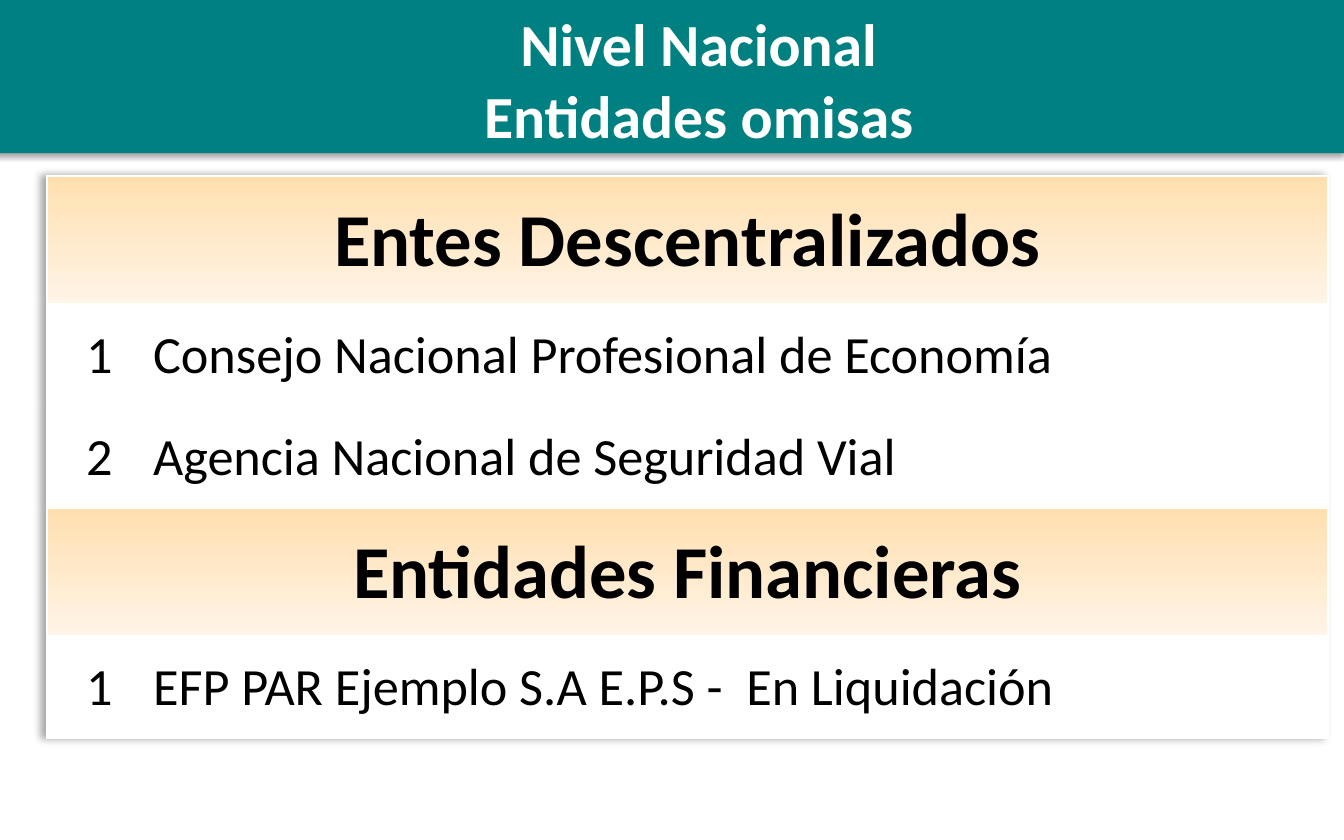
from lxml import etree
from pptx import Presentation, util as u
from pptx.dml.color import RGBColor
from pptx.enum import shapes, text
from pptx.oxml import ns

PX = u.Inches(1) // 100
FONT = "Calibri"
SECTIONS = [
    ("Entes Descentralizados", ["Consejo Nacional Profesional de Economía",
                                "Agencia Nacional de Seguridad Vial"]),
    ("Entidades Financieras", ["EFP PAR Ejemplo S.A E.P.S -  En Liquidación"]),
]


def px(*values):
    """Turn px lengths into EMU."""
    return [v * PX for v in values]


def rgb(value):
    """Turn a hex string into a colour."""
    return RGBColor.from_string(value)


def shadow(blur, dist, angle, alpha):
    """Return an effect list holding one black outer shadow."""
    effects = etree.Element(ns.qn("a:effectLst"))
    outer = etree.SubElement(effects, ns.qn("a:outerShdw"), blurRad=str(u.Pt(blur)),
                             dist=str(u.Pt(dist)), dir=str(angle * 60000),
                             algn="tl", rotWithShape="0")
    color = etree.SubElement(outer, ns.qn("a:srgbClr"), val="000000")
    etree.SubElement(color, ns.qn("a:alpha"), val=str(alpha * 1000))
    return effects


def style(p, size, color, bold, align):
    """Set the font and alignment of a paragraph."""
    p.alignment = align
    p.font.name, p.font.size, p.font.bold = FONT, u.Pt(size), bold
    p.font.color.rgb = rgb(color)


def add_header(s, x, y, w, h):
    """Draw the title band and its two-line title."""
    sp = s.shapes.add_shape(shapes.MSO_SHAPE.RECTANGLE, *px(x, y, w, h))
    sp.fill.solid()
    sp.fill.fore_color.rgb = rgb("008080")
    sp.line.fill.background()
    sp._element.spPr.append(shadow(3.1, 1.6, 90, 38))
    tf = s.shapes.add_textbox(*px(x + 268, y, 512, h - 6)).text_frame
    tf.word_wrap = True
    tf.margin_top, tf.margin_bottom = px(7, 0)
    p = tf.paragraphs[0]
    p.text = "Nivel Nacional\vEntidades omisas"
    style(p, 32, "FFFFFF", True, text.PP_ALIGN.CENTER)


def fill_cell(cell, value, size, bold, align):
    """Write a table cell on a white ground."""
    cell.margin_left, cell.margin_top, cell.margin_right, cell.margin_bottom = px(1, 1, 1, 0)
    cell.vertical_anchor = text.MSO_ANCHOR.MIDDLE
    cell.fill.solid()
    cell.fill.fore_color.rgb = rgb("FFFFFF")
    p = cell.text_frame.paragraphs[0]
    p.text = value
    style(p, size, "000000", bold, align)


def fill_heading(left, right, value):
    """Merge a row into a section heading with a gradient ground."""
    left.merge(right)
    fill_cell(left, value, 40, True, text.PP_ALIGN.CENTER)
    left.fill.gradient()
    left.fill.gradient_angle = 270
    for stop, color in zip(left.fill.gradient_stops, ("FFDFAF", "FFF4E7")):
        stop.color.rgb = rgb(color)


def add_entities(s, x, y, w, h):
    """Draw the table of entities, numbered within each section."""
    rows = [row for title, names in SECTIONS
            for row in [(None, title), *enumerate(names, 1)]]
    tbl = s.shapes.add_table(len(rows), 2, *px(x, y, w, h)).table
    tbl.first_row = tbl.horz_banding = False
    tbl._tbl.tblPr.insert(0, shadow(4, 3, 180, 35))
    tbl.columns[0].width, tbl.columns[1].width = px(78, w - 78)
    for i, (number, name) in enumerate(rows):
        left, right = tbl.cell(i, 0), tbl.cell(i, 1)
        tbl.rows[i].height = px(76 if number else 95)[0]
        if number:
            fill_cell(left, str(number), 28, False, text.PP_ALIGN.CENTER)
            fill_cell(right, name, 28, False, text.PP_ALIGN.LEFT)
        else:
            fill_heading(left, right, name)


def main():
    """Build the slide and save it."""
    prs = Presentation()
    prs.slide_width, prs.slide_height = px(1000, 625)
    s = prs.slides.add_slide(prs.slide_layouts[6])
    add_header(s, -4, -2, 1004, 116)
    add_entities(s, 35, 131, 953, 418)
    prs.save("out.pptx")


if __name__ == "__main__":
    main()
